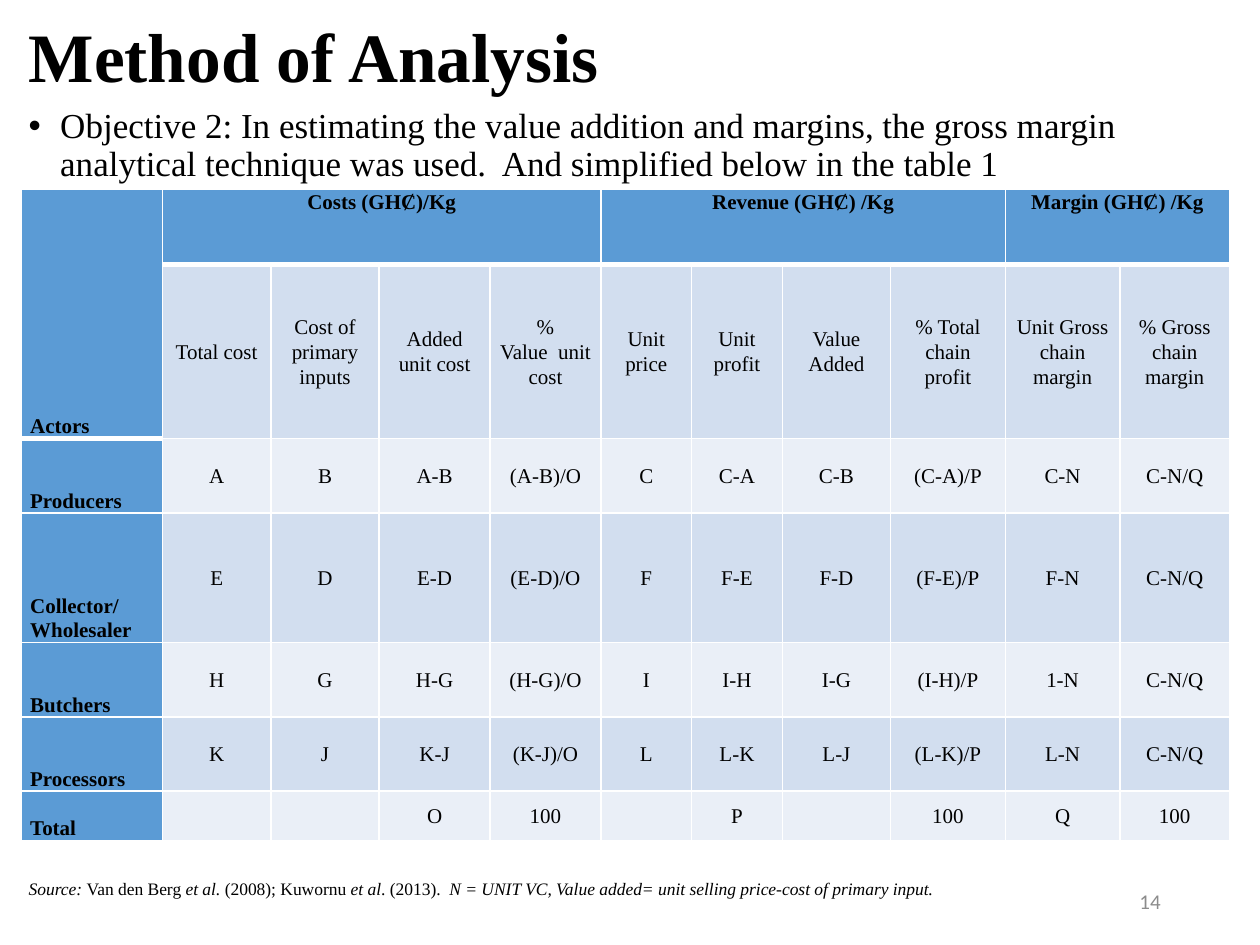
from dataclasses import dataclass

from lxml import etree
from pptx import Presentation
from pptx import util as u
from pptx.dml import color
from pptx.enum import text
from pptx.oxml import ns


@dataclass(frozen=True)
class Theme:
    face: str = "Times New Roman"
    plain: str = "Calibri"
    ink: str = "000000"
    gray: str = "8C8C8C"
    head: str = "5B9BD5"
    dark: str = "D2DEEF"
    light: str = "EAEFF7"
    rule: str = "FFFFFF"
    title: float = 39.6
    body: float = 20
    cell: float = 12
    note: float = 10


LOOK = Theme()
MID, LOW, TOP = (text.MSO_ANCHOR.MIDDLE, text.MSO_ANCHOR.BOTTOM,
                 text.MSO_ANCHOR.TOP)
CENTER, LEFT, RIGHT = (text.PP_ALIGN.CENTER, text.PP_ALIGN.LEFT,
                       text.PP_ALIGN.RIGHT)

COLS = [1.12, 0.86, 0.86, 0.88, 0.88, 0.72, 0.72, 0.86, 0.91, 0.91, 0.87]
ROWS = [0.6, 1.38, 0.59, 1.03, 0.59, 0.59, 0.39]
# First column, last column, heading
GROUPS = [(1, 4, "Costs (GHȻ)/Kg"), (5, 8, "Revenue (GHȻ) /Kg"),
          (9, 10, "Margin (GHȻ) /Kg")]
DATA = [
    ["", "Total cost", "Cost of primary inputs", "Added unit cost",
     "%\nValue  unit cost", "Unit price", "Unit profit", "Value Added",
     "% Total chain profit", "Unit Gross chain margin",
     "% Gross chain margin"],
    ["Producers", "A", "B", "A-B", "(A-B)/O", "C", "C-A", "C-B", "(C-A)/P",
     "C-N", "C-N/Q"],
    ["Collector/Wholesaler", "E", "D", "E-D", "(E-D)/O", "F", "F-E", "F-D",
     "(F-E)/P", "F-N", "C-N/Q"],
    ["Butchers", "H", "G", "H-G", "(H-G)/O", "I", "I-H", "I-G", "(I-H)/P",
     "1-N", "C-N/Q"],
    ["Processors", "K", "J", "K-J", "(K-J)/O", "L", "L-K", "L-J", "(L-K)/P",
     "L-N", "C-N/Q"],
    ["Total", "", "", "O", "100", "", "P", "", "100", "Q", "100"],
]
SOURCE = [  # words, italic
    ("Source: ", True), ("Van den Berg ", False), ("et al. ", True),
    ("(2008); Kuwornu ", False), ("et al", True), (". (2013).  ", False),
    ("N = UNIT VC, Value added= unit selling price-cost of primary input.",
     True),
]


def style(para, size, tint=LOOK.ink, face=LOOK.face, bold=False,
          align=LEFT, space=0.9):
    font = para.font
    font.name, font.size, font.bold = face, u.Pt(size), bold
    font.color.rgb = color.RGBColor.from_string(tint)
    para.alignment, para.line_spacing = align, space


def add_text(slide, box, runs, size, anchor=TOP, **looks):
    shape = slide.shapes.add_textbox(*map(u.Inches, box))
    frame = shape.text_frame
    frame.word_wrap, frame.vertical_anchor = True, anchor
    para = frame.paragraphs[0]
    for words, slant in runs:
        run = para.add_run()
        run.text = words
        if slant:
            run.font.italic = True
    style(para, size, **looks)
    return para


def add_bullet(para, indent):
    props = para._p.get_or_add_pPr()
    props.set("marL", str(u.Inches(indent)))
    props.set("indent", str(-u.Inches(indent)))
    mark = etree.Element(ns.qn("a:buChar"), char="•")
    rest = props.find(ns.qn("a:defRPr"))
    rest.addprevious(etree.Element(ns.qn("a:buFont"), typeface="Arial"))
    rest.addprevious(mark)


def add_rules(cell, top, base):
    props = cell._tc.get_or_add_tcPr()
    sides = [("L", 1), ("R", 1), ("T", top), ("B", base)]
    for spot, (side, width) in enumerate(sides):
        line = etree.Element(ns.qn("a:ln" + side), w=str(u.Pt(width)))
        fill = etree.SubElement(line, ns.qn("a:solidFill"))
        etree.SubElement(fill, ns.qn("a:srgbClr"), val=LOOK.rule)
        props.insert(spot, line)


def fill_cell(cell, words, tint, bold, align, anchor):
    cell.fill.solid()
    cell.fill.fore_color.rgb = color.RGBColor.from_string(tint)
    cell.margin_left = cell.margin_right = u.Inches(0.07)
    cell.margin_top = cell.margin_bottom = 0
    cell.vertical_anchor = anchor
    cell.text = words
    for para in cell.text_frame.paragraphs:
        style(para, LOOK.cell, bold=bold, align=align, space=1.07)


def add_grid(slide):
    box = map(u.Inches, (0.17, 1.5, sum(COLS), sum(ROWS)))
    grid = slide.shapes.add_table(len(ROWS), len(COLS), *box).table
    for col, width in zip(grid.columns, COLS):
        col.width = u.Inches(width)
    for row, height in zip(grid.rows, ROWS):
        row.height = u.Inches(height)

    # Heading row, with the actors cell spanning two rows
    heads = {first: words for first, last, words in GROUPS}
    heads[0] = "Actors"
    rows = [[heads.get(c, "") for c in range(len(COLS))]] + DATA
    for r, row in enumerate(rows):
        band = LOOK.dark if r % 2 else LOOK.light
        for c, words in enumerate(row):
            cell = grid.cell(r, c)
            if c == 0:
                fill_cell(cell, words, LOOK.head, True, LEFT, LOW)
            elif r == 0:
                fill_cell(cell, words, LOOK.head, True, CENTER, TOP)
            else:
                fill_cell(cell, words, band, False, CENTER, MID)
            # Thick rule under the headings
            edge = 1 if c == 0 else 0
            last = 3 if r == edge or r == 0 else 1
            add_rules(cell, 3 if r == edge + 1 else 1, last)

    # Merged headings
    grid.cell(0, 0).merge(grid.cell(1, 0))
    for first, last, words in GROUPS:
        grid.cell(0, first).merge(grid.cell(0, last))


def main():
    deck = Presentation()
    deck.slide_width, deck.slide_height = u.Inches(10), u.Inches(7.5)
    slide = deck.slides.add_slide(deck.slide_layouts[6])

    # Title and objective
    add_text(slide, (0.13, 0.15, 9.77, 0.66),
             [("Method of Analysis", False)], LOOK.title, MID, bold=True)
    goal = ("Objective 2: In estimating the value addition and margins, the "
            "gross margin analytical technique was used.  And simplified "
            "below in the table 1")
    para = add_text(slide, (0.13, 0.81, 9.77, 0.69), [(goal, False)],
                    LOOK.body)
    add_bullet(para, 0.25)

    # Margin table
    add_grid(slide)

    # Source and page number
    add_text(slide, (0.13, 6.94, 8, 0.26), SOURCE, LOOK.note)
    add_text(slide, (7.06, 6.95, 2.25, 0.4), [("14", False)], LOOK.cell, MID,
             tint=LOOK.gray, face=LOOK.plain, align=RIGHT, space=1)

    deck.save("out.pptx")


if __name__ == "__main__":
    main()
